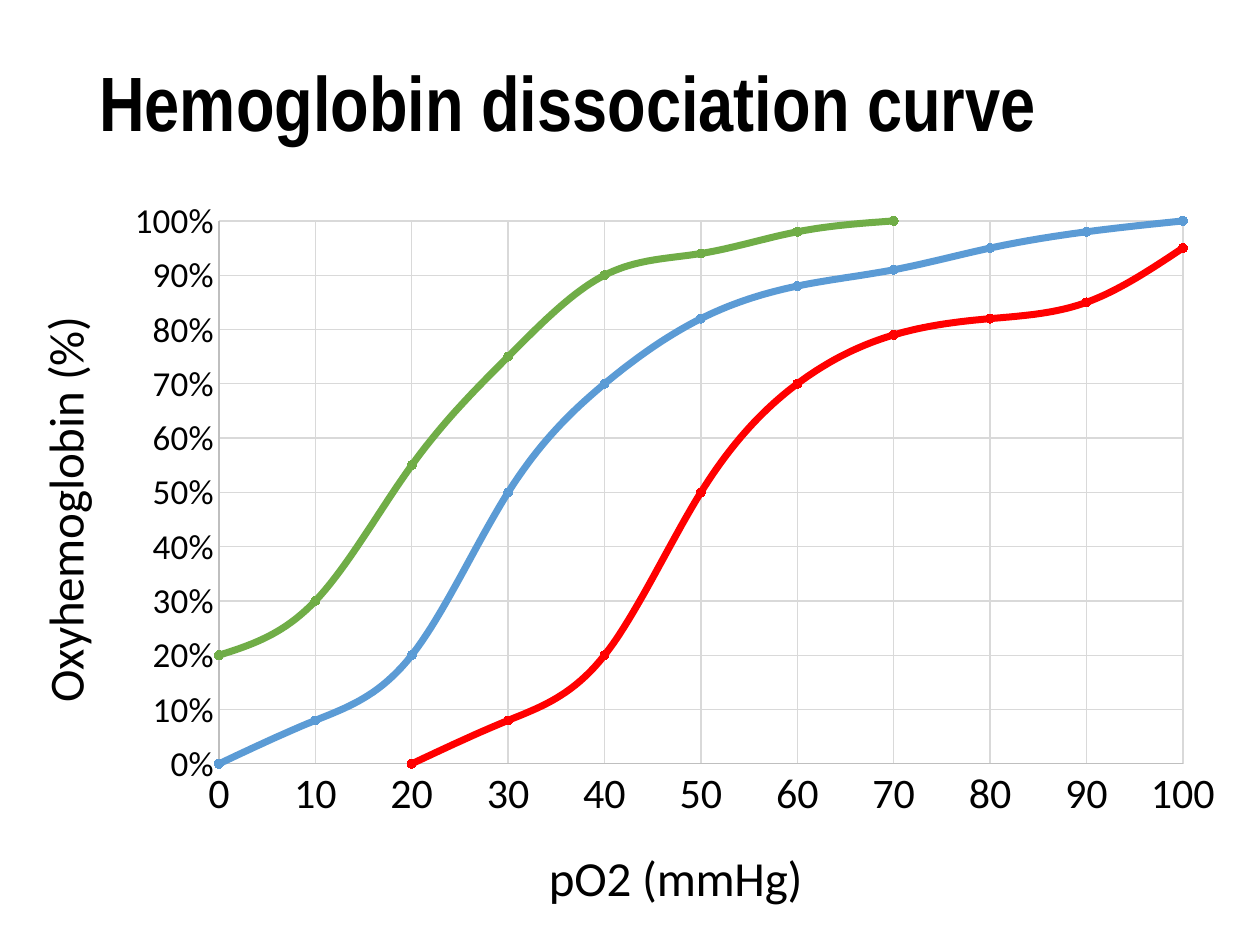
from dataclasses import dataclass

from pptx import Presentation
from pptx.chart.data import XyChartData
from pptx.dml.color import RGBColor
from pptx.enum.chart import XL_CHART_TYPE as ChartType
from pptx.enum.chart import XL_MARKER_STYLE as Marker
from pptx.enum.chart import XL_TICK_MARK as TickMark
from pptx.enum.text import MSO_ANCHOR as Anchor
from pptx.oxml import parse_xml
from pptx.oxml.ns import nsdecls, qn
from pptx.util import Emu, Pt

PX_PER_INCH = 126
CHART_WIDTH, CHART_HEIGHT = 1240, 761
PRESSURES = range(0, 101, 10)


def px(length):
    return Emu(round(length * 914400 / PX_PER_INCH))


@dataclass(frozen=True)
class Theme:
    text: str = "000000"
    axis: str = "BFBFBF"
    grid: str = "D9D9D9"
    normal: str = "5B9BD5"
    left_shift: str = "70AD47"
    right_shift: str = "FF0000"
    title_font: str = "Arial Narrow"
    chart_font: str = "Calibri"
    title_size: int = 44
    axis_title_size: int = 28
    pressure_size: int = 24
    saturation_size: int = 20


def style_font(font, name, size, color, bold=False):
    font.name, font.size, font.bold = name, Pt(size), bold
    font.color.rgb = RGBColor.from_string(color)


def style_line(line, color, width):
    line.color.rgb = RGBColor.from_string(color)
    line.width = Pt(width)


def set_layout(element, inner=False, **lengths):
    """Place a plot area or axis title by px from the chart's top left corner."""
    target = '<c:layoutTarget val="inner"/>' if inner else ""
    modes = "".join(f'<c:{key}Mode val="edge"/>' for key in "xy")
    frame = dict(x=CHART_WIDTH, y=CHART_HEIGHT, w=CHART_WIDTH, h=CHART_HEIGHT)
    values = "".join(
        f'<c:{key} val="{length / frame[key]:.4f}"/>' for key, length in lengths.items()
    )
    layout = parse_xml(
        f'<c:layout {nsdecls("c")}><c:manualLayout>{target}{modes}{values}'
        "</c:manualLayout></c:layout>"
    )
    present = element.find(qn("c:layout"))
    if present is not None:
        element.replace(present, layout)
    elif element.find(qn("c:tx")) is not None:
        element.find(qn("c:tx")).addnext(layout)
    else:
        element.insert(0, layout)


def drop_empty_points(series_element):
    for point in list(series_element.find(qn("c:yVal")).iter(qn("c:pt"))):
        if point.findtext(qn("c:v")) in (None, "", "None"):
            point.getparent().remove(point)


class Page:
    def __init__(self, deck, theme):
        self.theme = theme
        self.slide = deck.slides.add_slide(deck.slide_layouts[6])

    def title(self, text, left, top, width, height):
        box = self.slide.shapes.add_textbox(px(left), px(top), px(width), px(height))
        frame = box.text_frame
        frame.word_wrap = True
        frame.vertical_anchor = Anchor.MIDDLE
        para = frame.paragraphs[0]
        para.line_spacing = 0.9
        span = para.add_run()
        span.text = text
        theme = self.theme
        style_font(span.font, theme.title_font, theme.title_size, theme.text, bold=True)

    def curves(self, curves, left, top):
        """Add smooth curves, each given as name, colour and percentages by pressure."""
        data = XyChartData()
        for name, _, percents in curves:
            series = data.add_series(name)
            for pressure, percent in zip(PRESSURES, percents):
                series.add_data_point(pressure, None if percent is None else percent / 100)
        chart = self.slide.shapes.add_chart(
            ChartType.XY_SCATTER_SMOOTH,
            px(left), px(top), px(CHART_WIDTH), px(CHART_HEIGHT), data,
        ).chart
        chart.has_legend = chart.has_title = False
        style_font(chart.font, self.theme.chart_font, 10, self.theme.text)
        plot = chart.plots[0]
        plot.vary_by_categories = False
        for series, (_, color, _) in zip(plot.series, curves):
            drop_empty_points(series._element)
            series._element.get_or_add_smooth().val = True
            style_line(series.format.line, color, 4)
            series.marker.style, series.marker.size = Marker.CIRCLE, 5
            series.marker.format.fill.solid()
            series.marker.format.fill.fore_color.rgb = RGBColor.from_string(color)
            series.marker.format.line.fill.background()
        return chart

    def axis(self, axis, title, size, maximum, number_format, x, y):
        theme = self.theme
        axis.minimum_scale, axis.maximum_scale = 0, maximum
        axis.major_unit = maximum / 10
        axis.major_tick_mark = axis.minor_tick_mark = TickMark.NONE
        axis.has_major_gridlines = True
        style_line(axis.major_gridlines.format.line, theme.grid, 0.75)
        style_line(axis.format.line, theme.axis, 0.75)
        labels = axis.tick_labels
        labels.number_format, labels.number_format_is_linked = number_format, False
        style_font(labels.font, theme.chart_font, size, theme.text)
        span = axis.axis_title.text_frame.paragraphs[0].add_run()
        span.text = title
        style_font(span.font, theme.chart_font, theme.axis_title_size, theme.text)
        set_layout(axis.axis_title._element, x=x, y=y)


def main():
    theme = Theme()
    deck = Presentation()
    deck.slide_width, deck.slide_height = px(1260), px(945)
    page = Page(deck, theme)
    page.title("Hemoglobin dissociation curve", 87, 51, 1086, 112)

    gap = [None]
    curves = [
        ("Series 1", theme.normal, [0, 8, 20, 50, 70, 82, 88, 91, 95, 98, 100]),
        ("Series 2", theme.left_shift, [20, 30, 55, 75, 90, 94, 98, 100] + gap * 3),
        ("Series 3", theme.right_shift, gap * 2 + [0, 8, 20, 50, 70, 79, 82, 85, 95]),
    ]
    chart = page.curves(curves, 0, 184)
    page.axis(chart.category_axis, "pO2 (mmHg)", theme.pressure_size, 100, "General", 540, 652)
    page.axis(chart.value_axis, "Oxyhemoglobin (%)", theme.saturation_size, 1, "0%", 23, 124)
    plot_area = chart._chartSpace.chart.plotArea
    set_layout(plot_area, inner=True, x=219, y=37, w=964, h=543)
    deck.save("out.pptx")


if __name__ == "__main__":
    main()
